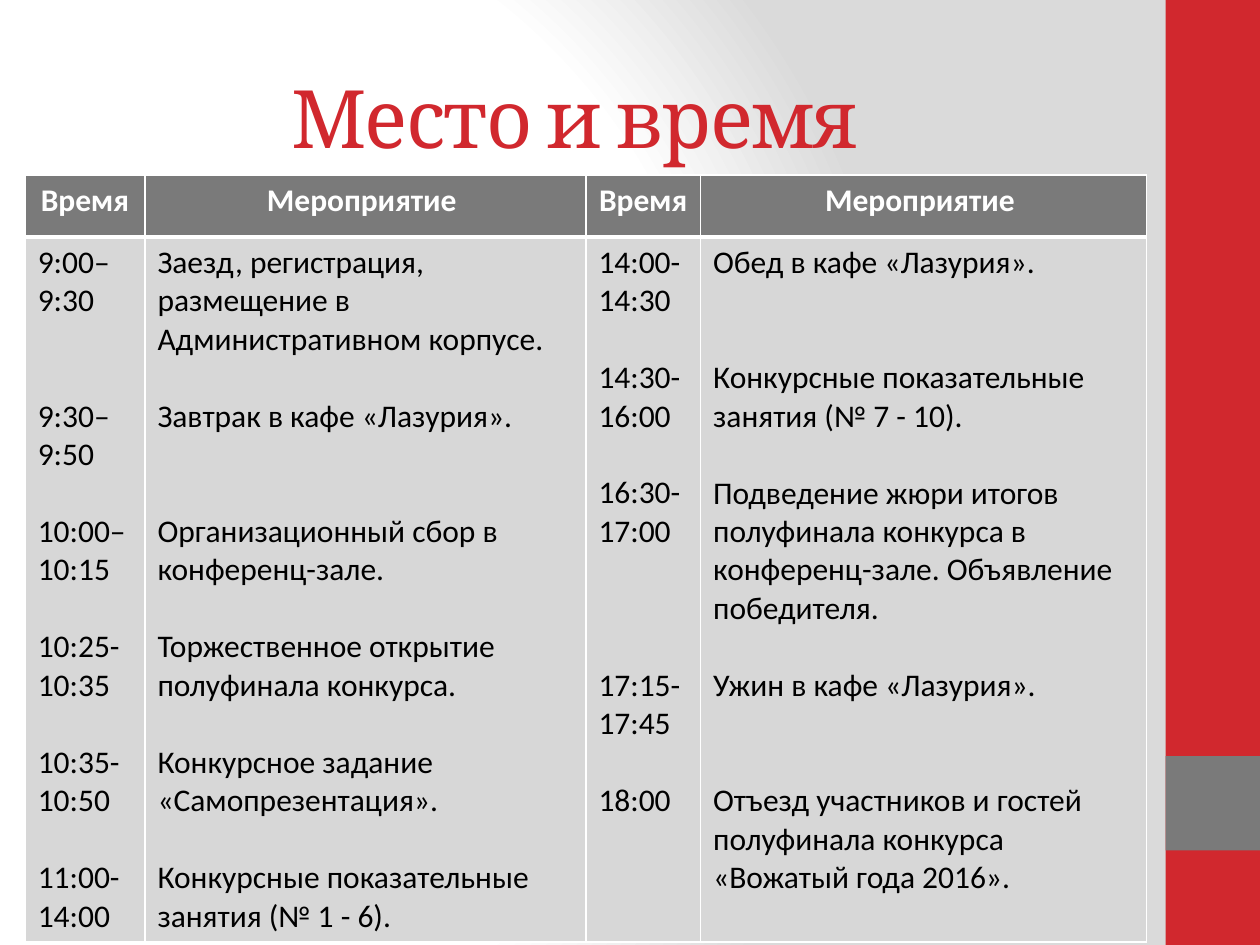
"""Build the schedule slide: title, two-part timetable and a red side band."""
from lxml.etree import fromstring
from pptx import Presentation
from pptx.dml.color import RGBColor
from pptx.enum.shapes import MSO_SHAPE
from pptx.enum.text import MSO_ANCHOR, PP_ALIGN
from pptx.util import Inches, Pt

RED = RGBColor(0xD1, 0x28, 0x2E)
GRAY = RGBColor(0x7A, 0x7A, 0x7A)
PALE = RGBColor(0xD7, 0xD7, 0xD7)
WHITE = RGBColor(0xFF, 0xFF, 0xFF)
BLACK = RGBColor(0, 0, 0)
LINE_HEIGHT = 22
MAIN = "http://schemas.openxmlformats.org/drawingml/2006/main"
PRES = "http://schemas.openxmlformats.org/presentationml/2006/main"
BACKGROUND = f"""<p:bg xmlns:p="{PRES}" xmlns:a="{MAIN}"><p:bgPr>
<a:gradFill rotWithShape="1"><a:gsLst>
<a:gs pos="0"><a:srgbClr val="FFFFFF"/></a:gs>
<a:gs pos="75000"><a:srgbClr val="FFFFFF"/></a:gs>
<a:gs pos="100000"><a:srgbClr val="DADADA"/></a:gs></a:gsLst>
<a:path path="circle"><a:fillToRect l="20000" t="50000" r="100000" b="50000"/></a:path>
</a:gradFill><a:effectLst/></p:bgPr></p:bg>"""


def write(frame, entries, font="Calibri", size=18, color=BLACK, bold=False,
          align=PP_ALIGN.LEFT, spacing=0):
    for index, (blank_lines, text) in enumerate(entries):
        paragraph = frame.add_paragraph() if index else frame.paragraphs[0]
        paragraph.alignment = align
        paragraph.space_before = Pt(blank_lines * LINE_HEIGHT)
        run = paragraph.add_run()
        run.text = text
        run.font.name, run.font.size, run.font.bold = font, Pt(size), bold
        run.font.color.rgb = color
        if spacing:
            run._r.get_or_add_rPr().set("spc", str(spacing))


def set_borders(cell, bottom):
    properties = cell._tc.get_or_add_tcPr()
    for position, (side, width) in enumerate(
            [("lnL", 1), ("lnR", 1), ("lnT", 1), ("lnB", bottom)]):
        border = fromstring(f'<a:{side} xmlns:a="{MAIN}" w="{Pt(width)}"><a:solidFill>'
                            f'<a:srgbClr val="{WHITE}"/></a:solidFill></a:{side}>')
        properties.insert(position, border)


presentation = Presentation()
presentation.slide_width, presentation.slide_height = Inches(10), Inches(7.5)
slide = presentation.slides.add_slide(presentation.slide_layouts[5])
slide.element.cSld.insert(0, fromstring(BACKGROUND))

for top, width, height, color in [(0, 0.75, 7.5, RED), (6, 0.75, 0.75, GRAY)]:
    band = slide.shapes.add_shape(MSO_SHAPE.RECTANGLE, Inches(9.25), Inches(top),
                                  Inches(width), Inches(height))
    band.shadow.inherit = False
    band.fill.solid()
    band.fill.fore_color.rgb = color
    band.line.fill.background()

title = slide.shapes.title
title.left, title.top, title.width, title.height = map(Inches, (0.28, 0.3, 8.56, 1.25))
title.text_frame.vertical_anchor = MSO_ANCHOR.MIDDLE
write(title.text_frame, [(0, "Место и время")], font="Cambria", size=46, color=RED,
      align=PP_ALIGN.CENTER, spacing=-100)

schedule = [
    ("Время", 0.95, [(0, "9:00– 9:30"), (2, "9:30– 9:50"), (1, "10:00– 10:15"),
                     (1, "10:25-10:35"), (1, "10:35-10:50"), (1, "11:00-14:00")]),
    ("Мероприятие ", 3.5, [
        (0, "Заезд, регистрация, размещение в Административном корпусе."),
        (1, "Завтрак в кафе «Лазурия»."),
        (2, "Организационный сбор в конференц-зале."),
        (1, "Торжественное открытие полуфинала конкурса."),
        (1, "Конкурсное задание «Самопрезентация»."),
        (1, "Конкурсные показательные занятия (№ 1 - 6).")]),
    ("Время", 0.91, [(0, "14:00-14:30"), (1, "14:30-16:00"), (1, "16:30-17:00"),
                     (3, "17:15-17:45"), (1, "18:00")]),
    ("Мероприятие ", 3.54, [
        (0, "Обед в кафе «Лазурия»."),
        (2, "Конкурсные показательные занятия (№ 7 - 10)."),
        (1, "Подведение жюри итогов полуфинала конкурса в конференц-зале. "
            "Объявление победителя."),
        (1, "Ужин в кафе «Лазурия»."),
        (2, "Отъезд участников и гостей полуфинала конкурса «Вожатый года 2016».")]),
]
timetable = slide.shapes.add_table(2, len(schedule), Inches(0.2), Inches(1.39),
                                   Inches(8.9), Inches(5.83)).table
timetable.rows[0].height, timetable.rows[1].height = Inches(0.49), Inches(5.34)
for column, (heading, width, entries) in enumerate(schedule):
    timetable.columns[column].width = Inches(width)
    header, body = timetable.cell(0, column), timetable.cell(1, column)
    for cell, color, bottom in [(header, GRAY, 3), (body, PALE, 1)]:
        cell.fill.solid()
        cell.fill.fore_color.rgb = color
        set_borders(cell, bottom)
    write(header.text_frame, [(0, heading)], color=WHITE, bold=True,
          align=PP_ALIGN.CENTER)
    write(body.text_frame, entries)

presentation.save("out.pptx")
